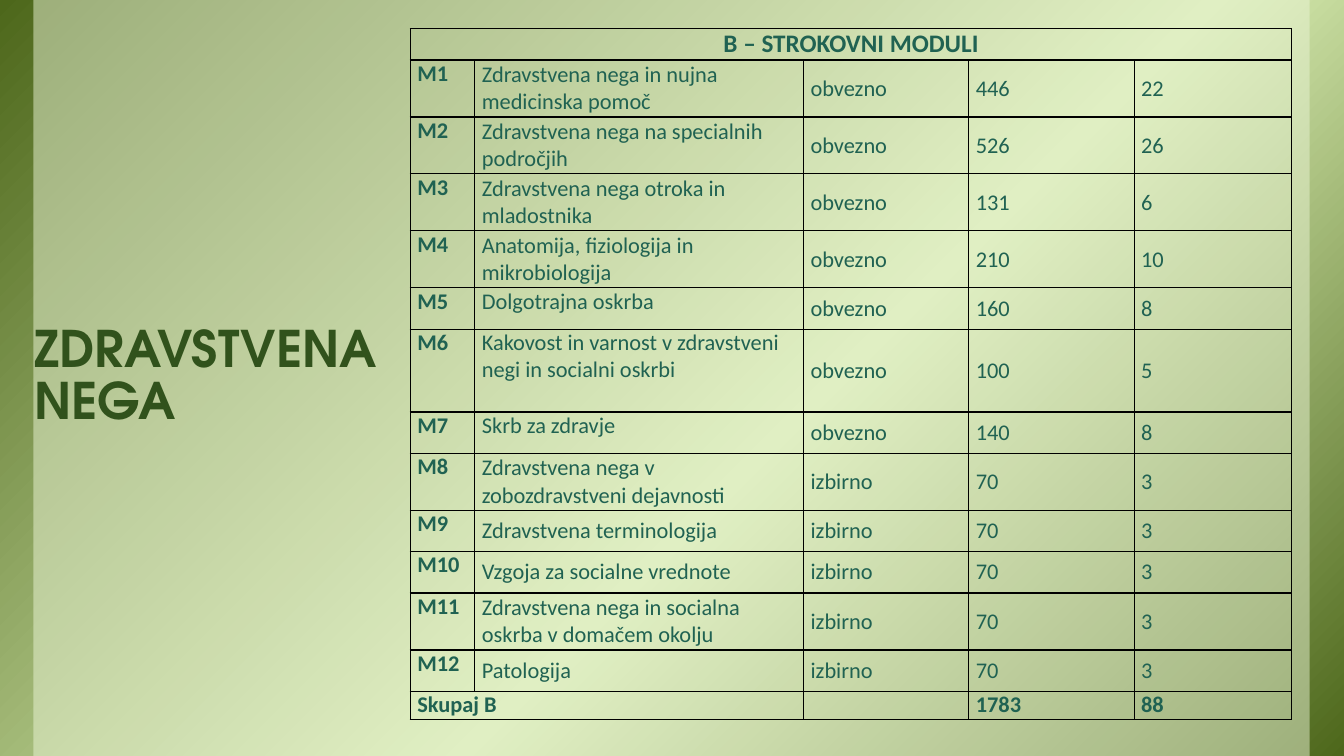
from copy import deepcopy
from dataclasses import dataclass

from lxml import etree
from pptx import Presentation
from pptx.dml.color import RGBColor
from pptx.enum.shapes import MSO_SHAPE
from pptx.enum.text import MSO_ANCHOR, MSO_AUTO_SIZE, PP_ALIGN
from pptx.oxml.ns import qn
from pptx.shapes.autoshape import Shape
from pptx.slide import Slide
from pptx.table import Table, _Cell
from pptx.util import Inches, Pt

RECTANGLE = MSO_SHAPE.RECTANGLE
TOP, MIDDLE, BOTTOM = MSO_ANCHOR.TOP, MSO_ANCHOR.MIDDLE, MSO_ANCHOR.BOTTOM
LEFT, CENTER = PP_ALIGN.LEFT, PP_ALIGN.CENTER
NO_AUTOFIT = MSO_AUTO_SIZE.NONE
TITLE_ONLY = 5

SLIDE_WIDTH, SLIDE_HEIGHT = Inches(13.33), Inches(7.5)
# Lengths below are in columns and rows of a 100 by 100 grid
COLUMN, ROW = SLIDE_WIDTH / 100, SLIDE_HEIGHT / 100

COLORS = {
    "edge": "4D671B",
    "glow": "D6EAAF",
    "panel": "EBF5D7",
    "title": "31521C",
    "text": "206252",
    "border": "000000",
}
GRADIENT = ((0, "edge"), (0.58, "glow"), (1, "edge"))
TITLE_FONT, TABLE_FONT = "TeX Gyre Adventor", "Calibri"

COLUMN_WIDTHS = (4.8, 24.46, 12.3, 12.3, 11.74)
HEADER, ONE_LINE, TWO_LINES, TOTAL = 4.13, 5.47, 7.54, 3.73


@dataclass(frozen=True)
class Box:
    left: float
    top: float
    width: float
    height: float

    def emu(self) -> tuple[int, int, int, int]:
        return (int(self.left * COLUMN), int(self.top * ROW),
                int(self.width * COLUMN), int(self.height * ROW))


@dataclass(frozen=True)
class Module:
    name: str
    status: str
    hours: int
    credits: int
    height: float = ONE_LINE
    name_anchor: MSO_ANCHOR = MIDDLE


MODULES = (
    Module("Zdravstvena nega in nujna medicinska pomoč", "obvezno", 446, 22, TWO_LINES),
    Module("Zdravstvena nega na specialnih področjih", "obvezno", 526, 26, TWO_LINES),
    Module("Zdravstvena nega otroka in mladostnika", "obvezno", 131, 6, TWO_LINES),
    Module("Anatomija, fiziologija in mikrobiologija", "obvezno", 210, 10, TWO_LINES),
    Module("Dolgotrajna oskrba", "obvezno", 160, 8, name_anchor=TOP),
    Module("Kakovost in varnost v zdravstveni negi in socialni oskrbi", "obvezno", 100, 5,
           2 * ONE_LINE, TOP),
    Module("Skrb za zdravje", "obvezno", 140, 8, name_anchor=TOP),
    Module("Zdravstvena nega v zobozdravstveni dejavnosti", "izbirno", 70, 3, TWO_LINES),
    Module("Zdravstvena terminologija", "izbirno", 70, 3),
    Module("Vzgoja za socialne vrednote", "izbirno", 70, 3),
    Module("Zdravstvena nega in socialna oskrba v domačem okolju", "izbirno", 70, 3, TWO_LINES),
    Module("Patologija", "izbirno", 70, 3),
)
ROW_HEIGHTS = (HEADER, *(module.height for module in MODULES), TOTAL)

BACKDROP = Box(0, 0, 100, 100)
PANEL = Box(2.48, 0, 94.97, 100)
TITLE = Box(1.58, 32.13, 28.13, 25.6)
TABLE = Box(30.53, 3.8, sum(COLUMN_WIDTHS), sum(ROW_HEIGHTS))


def color(name: str) -> RGBColor:
    return RGBColor.from_string(COLORS[name])


def add_rectangle(slide: Slide, box: Box) -> Shape:
    shape = slide.shapes.add_shape(RECTANGLE, *box.emu())
    shape.shadow.inherit = False
    shape.line.fill.background()
    return shape


def add_backdrop(slide: Slide) -> None:
    """Draw the diagonal gradient and the translucent panel over it."""
    backdrop = add_rectangle(slide, BACKDROP)
    backdrop.fill.gradient()
    backdrop.fill.gradient_angle = 315
    stop_list = backdrop._element.spPr.find(".//" + qn("a:gsLst"))
    stop_list.insert(1, deepcopy(stop_list[0]))
    for stop, (position, name) in zip(backdrop.fill.gradient_stops, GRADIENT):
        stop.position = position
        stop.color.rgb = color(name)

    panel = add_rectangle(slide, PANEL)
    panel.fill.solid()
    panel.fill.fore_color.rgb = color("panel")
    panel_color = panel._element.spPr.find(".//" + qn("a:srgbClr"))
    etree.SubElement(panel_color, qn("a:alpha"), val="50000")


def format_title(slide: Slide) -> None:
    title = slide.shapes.title
    title.left, title.top, title.width, title.height = TITLE.emu()
    slide.shapes._spTree.append(title._element)
    frame = title.text_frame
    frame.text = "ZDRAVSTVENA NEGA"
    frame.word_wrap = True
    frame.auto_size = NO_AUTOFIT
    frame.vertical_anchor = BOTTOM
    frame.margin_left = frame.margin_right = Inches(0.13)
    frame.margin_top = frame.margin_bottom = Inches(0.07)
    paragraph = frame.paragraphs[0]
    paragraph.alignment = LEFT
    paragraph.line_spacing = 0.85
    font = paragraph.font
    font.name, font.size, font.bold = TITLE_FONT, Pt(36), True
    font.color.rgb = color("title")


def format_cell(cell: _Cell) -> None:
    """Give a cell black borders, no fill and tight margins."""
    properties = cell._tc.get_or_add_tcPr()
    for side in ("a:lnL", "a:lnR", "a:lnT", "a:lnB"):
        line = etree.SubElement(properties, qn(side), w=str(Pt(1)))
        fill = etree.SubElement(line, qn("a:solidFill"))
        etree.SubElement(fill, qn("a:srgbClr"), val=COLORS["border"])
    cell.fill.background()
    cell.margin_left = cell.margin_right = Inches(0.07)
    cell.margin_top = cell.margin_bottom = 0
    # An empty cell takes its line height from this mark
    end_mark = cell.text_frame.paragraphs[0]._p.get_or_add_endParaRPr()
    end_mark.set("sz", "1600")


def write_cell(cell: _Cell, text: str, size: int = 16, bold: bool = False,
               anchor: MSO_ANCHOR = TOP, alignment: PP_ALIGN = LEFT) -> None:
    cell.vertical_anchor = anchor
    paragraph = cell.text_frame.paragraphs[0]
    paragraph.add_run().text = text
    paragraph.alignment = alignment
    font = paragraph.font
    font.name, font.size, font.bold = TABLE_FONT, Pt(size), bold
    font.color.rgb = color("text")


def fill_table(table: Table) -> None:
    write_cell(table.cell(0, 0), "B – STROKOVNI MODULI", 18, True, alignment=CENTER)
    for number, module in enumerate(MODULES, start=1):
        write_cell(table.cell(number, 0), f"M{number}", bold=True)
        write_cell(table.cell(number, 1), module.name, anchor=module.name_anchor)
        for column, value in enumerate((module.status, module.hours, module.credits), start=2):
            write_cell(table.cell(number, column), str(value), anchor=MIDDLE)
    last = len(ROW_HEIGHTS) - 1
    for column, text in ((0, "Skupaj B"), (3, "1783"), (4, "88")):
        write_cell(table.cell(last, column), text, bold=True)
    table.cell(0, 0).merge(table.cell(0, len(COLUMN_WIDTHS) - 1))
    table.cell(last, 0).merge(table.cell(last, 1))


def add_module_table(slide: Slide) -> None:
    frame = slide.shapes.add_table(len(ROW_HEIGHTS), len(COLUMN_WIDTHS), *TABLE.emu())
    table = frame.table
    table.first_row = table.horz_banding = False
    for column, width in zip(table.columns, COLUMN_WIDTHS):
        column.width = int(width * COLUMN)
    for row, height in zip(table.rows, ROW_HEIGHTS):
        row.height = int(height * ROW)
    for cell in table.iter_cells():
        format_cell(cell)
    fill_table(table)


def main() -> None:
    presentation = Presentation()
    presentation.slide_width, presentation.slide_height = SLIDE_WIDTH, SLIDE_HEIGHT
    slide = presentation.slides.add_slide(presentation.slide_layouts[TITLE_ONLY])
    add_backdrop(slide)
    format_title(slide)
    add_module_table(slide)
    presentation.save("out.pptx")


if __name__ == "__main__":
    main()
